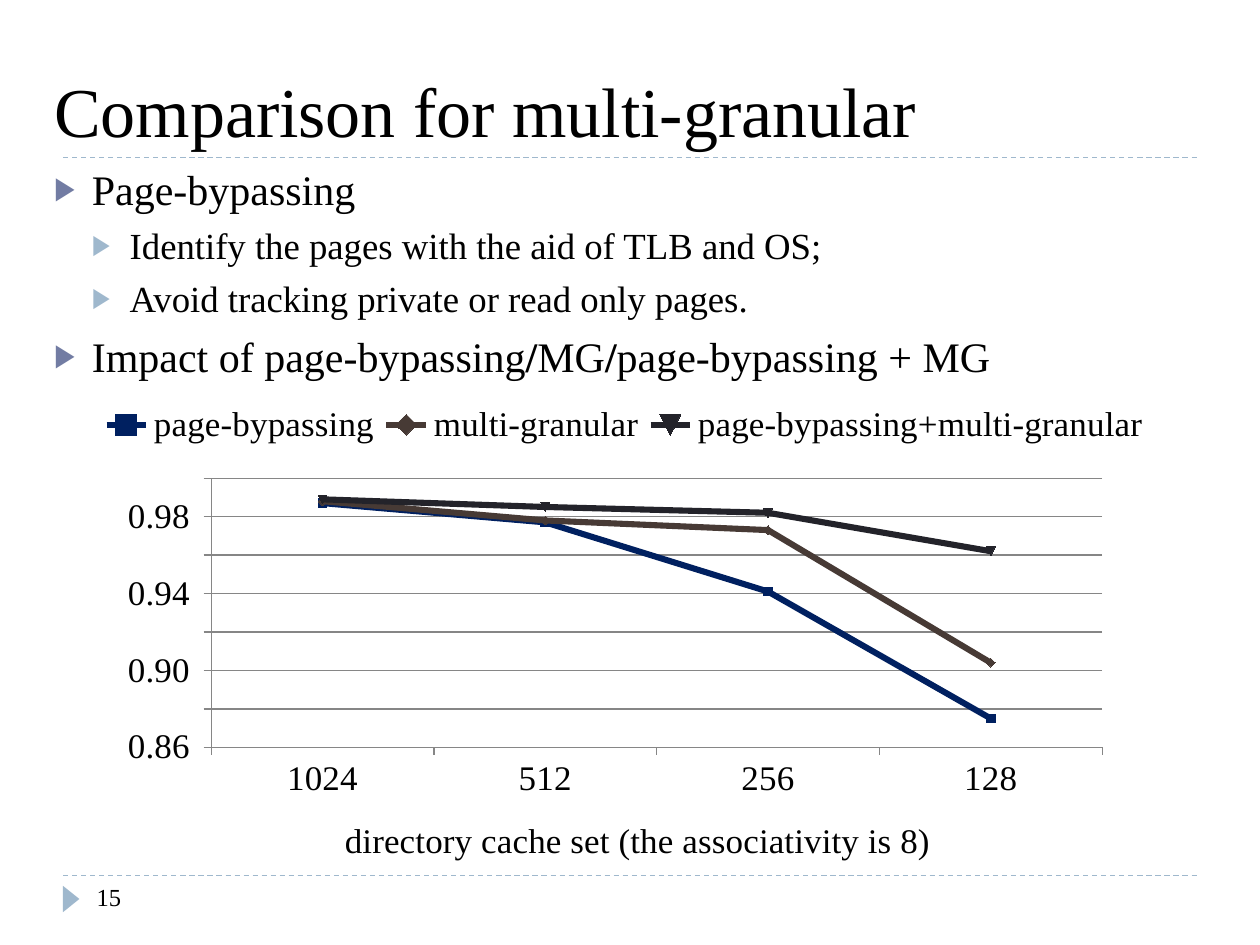
from dataclasses import dataclass
from typing import NamedTuple

from lxml.etree import SubElement
from pptx import Presentation
from pptx.chart.data import CategoryChartData
from pptx.dml.color import RGBColor
from pptx.enum.chart import (XL_CHART_TYPE as ChartType, XL_LEGEND_POSITION as LegendPosition,
                             XL_MARKER_STYLE as MarkerStyle, XL_TICK_MARK as TickMark)
from pptx.enum.dml import MSO_LINE_DASH_STYLE as DashStyle
from pptx.enum.shapes import MSO_CONNECTOR_TYPE as ConnectorType, MSO_SHAPE as ShapeType
from pptx.enum.text import MSO_ANCHOR as Anchor
from pptx.oxml.ns import qn
from pptx.util import Pt


@dataclass(frozen=True)
class Theme:
    font: str = "Times New Roman"
    text: str = "000000"
    accent: str = "727CA3"
    light_accent: str = "9FB8CD"
    grid: str = "868686"
    title_size: float = 40
    body_size: float = 24
    detail_size: float = 21
    chart_size: float = 20
    number_size: float = 14


THEME = Theme()


class Box(NamedTuple):
    left: float
    top: float
    width: float
    height: float

    def lengths(self):
        return [Pt(value) for value in self]


class Level(NamedTuple):
    size: float
    margin: float
    space_before: float
    bullet_color: str


class Bullet(NamedTuple):
    text: str
    level: Level
    bold_part: str = ""


class Series(NamedTuple):
    name: str
    values: tuple
    color: str


POINT = Level(THEME.body_size, 21.6, 6, THEME.accent)
DETAIL = Level(THEME.detail_size, 43.2, 5, THEME.light_accent)
HANGING = 21.6

BULLETS = [
    Bullet("Page-bypassing", POINT),
    Bullet("Identify the pages with the aid of TLB and OS;", DETAIL),
    Bullet("Avoid tracking private or read only pages.", DETAIL),
    Bullet("Impact of page-bypassing/MG/page-bypassing + MG", POINT, bold_part="/"),
]
CATEGORIES = ["1024", "512", "256", "128"]
SERIES = [
    Series("page-bypassing", (0.987, 0.977, 0.941, 0.875), "002060"),
    Series("multi-granular", (0.988, 0.978, 0.973, 0.904), "473A35"),
    Series("page-bypassing+multi-granular", (0.989, 0.985, 0.982, 0.962), "23232A"),
]


def rgb(color: str) -> RGBColor:
    return RGBColor.from_string(color)


def format_font(font, size: float, bold: bool = False) -> None:
    font.name, font.size, font.bold = THEME.font, Pt(size), bold
    font.color.rgb = rgb(THEME.text)


def add_text(paragraph, text: str, *, size: float, bold_part: str = "") -> None:
    """Add text as runs, with every occurrence of bold_part in bold."""
    pieces = text.split(bold_part) if bold_part else [text]
    for index, piece in enumerate(pieces):
        if index:
            run = paragraph.add_run()
            run.text = bold_part
            format_font(run.font, size, bold=True)
        run = paragraph.add_run()
        run.text = piece
        format_font(run.font, size)


def add_frame(slide, box: Box, anchor=Anchor.TOP):
    frame = slide.shapes.add_textbox(*box.lengths()).text_frame
    frame.word_wrap = True
    frame.vertical_anchor = anchor
    return frame


def add_bullets(slide, box: Box, bullets: list[Bullet]) -> None:
    frame = add_frame(slide, box)
    for index, bullet in enumerate(bullets):
        paragraph = frame.add_paragraph() if index else frame.paragraphs[0]
        level = bullet.level
        paragraph.space_before = Pt(level.space_before)
        properties = paragraph._p.get_or_add_pPr()
        properties.set("marL", str(Pt(level.margin)))
        properties.set("indent", str(-Pt(HANGING)))
        color = SubElement(properties, qn("a:buClr"))
        SubElement(color, qn("a:srgbClr"), val=level.bullet_color)
        SubElement(properties, qn("a:buSzPct"), val="76000")
        SubElement(properties, qn("a:buFont"), typeface=THEME.font)
        SubElement(properties, qn("a:buChar"), char="▶")
        add_text(paragraph, bullet.text, size=level.size, bold_part=bullet.bold_part)


def add_rule(slide, y: float) -> None:
    """Draw a dashed line across the slide at height y."""
    rule = slide.shapes.add_connector(ConnectorType.STRAIGHT, Pt(36), Pt(y), Pt(684), Pt(y))
    rule.line.color.rgb = rgb(THEME.light_accent)
    rule.line.width = Pt(0.75)
    rule.line.dash_style = DashStyle.DASH
    SubElement(rule._element.spPr, qn("a:effectLst"))


def add_page_arrow(slide, box: Box) -> None:
    arrow = slide.shapes.add_shape(ShapeType.ISOSCELES_TRIANGLE, *box.lengths())
    arrow.rotation = 90
    arrow.shadow.inherit = False
    arrow.fill.solid()
    arrow.fill.fore_color.rgb = rgb(THEME.light_accent)
    arrow.line.fill.background()


def set_layout(element, index: int, **settings) -> None:
    """Place a chart part by fractions of the chart; index is the layout's child position."""
    for old in element.findall(qn("c:layout")):
        element.remove(old)
    layout = SubElement(element, qn("c:layout"))
    element.insert(index, layout)
    manual = SubElement(layout, qn("c:manualLayout"))
    for name, value in settings.items():
        SubElement(manual, qn(f"c:{name}"), val=str(value))


def format_axis(axis) -> None:
    axis.major_tick_mark, axis.minor_tick_mark = TickMark.OUTSIDE, TickMark.NONE
    axis.format.line.color.rgb = rgb(THEME.grid)
    format_font(axis.tick_labels.font, THEME.chart_size)


def add_line_chart(slide, box: Box) -> None:
    data = CategoryChartData(number_format="0.000")
    data.categories = CATEGORIES
    for series in SERIES:
        data.add_series(series.name, series.values)
    chart = slide.shapes.add_chart(ChartType.LINE_MARKERS, *box.lengths(), data).chart
    format_font(chart.font, 18)
    chart.has_title = False
    chart.has_legend = True
    chart.legend.position = LegendPosition.TOP
    chart.legend.include_in_layout = False
    format_font(chart.legend.font, THEME.chart_size)

    category_axis, value_axis = chart.category_axis, chart.value_axis
    for axis in (category_axis, value_axis):
        format_axis(axis)
    axis_title = category_axis.axis_title
    add_text(axis_title.text_frame.paragraphs[0],
             "directory cache set (the associativity is 8)", size=THEME.chart_size)
    value_axis.minimum_scale, value_axis.maximum_scale = 0.86, 1
    value_axis.major_unit = 0.02
    value_axis.major_gridlines.format.line.color.rgb = rgb(THEME.grid)
    value_axis.tick_labels.number_format = r"#,##0.00_);[Red]\(#,##0.00\)"
    value_axis.tick_labels.number_format_is_linked = False

    edges = dict(xMode="edge", yMode="edge")
    set_layout(chart._chartSpace.chart.plotArea, 0, layoutTarget="inner", **edges,
               x=0.11, y=0.17, w=0.84, h=0.58)
    set_layout(chart.legend._element, 1, **edges, x=0, y=0, w=1, h=0.11)
    set_layout(axis_title._element, 1, **edges, x=0.23, y=0.89)

    chart.plots[0].vary_by_categories = False
    for line, series in zip(chart.plots[0].series, SERIES):
        line.smooth = False
        line.format.line.color.rgb = rgb(series.color)
        line.format.line.width = Pt(3.5)
        line.marker.style, line.marker.size = MarkerStyle.AUTOMATIC, 5
        line.marker.format.fill.solid()
        line.marker.format.fill.fore_color.rgb = rgb(series.color)


def main() -> None:
    presentation = Presentation()
    presentation.slide_width, presentation.slide_height = Pt(720), Pt(540)
    slide = presentation.slides.add_slide(presentation.slide_layouts[6])
    for y in (500.4, 90):
        add_rule(slide, y)
    add_page_arrow(slide, Box(33.1, 509, 15.1, 9.4))
    title = add_frame(slide, Box(23.8, 21.6, 678.2, 68.4), Anchor.BOTTOM)
    add_text(title.paragraphs[0], "Comparison for multi-granular", size=THEME.title_size)
    number = add_frame(slide, Box(48.2, 500.4, 156.2, 28.8))
    add_text(number.paragraphs[0], "15", size=THEME.number_size)
    add_bullets(slide, Box(23.8, 90, 678.2, 408.2), BULLETS)
    add_line_chart(slide, Box(54, 228.2, 606.2, 270))
    presentation.save("out.pptx")


if __name__ == "__main__":
    main()
